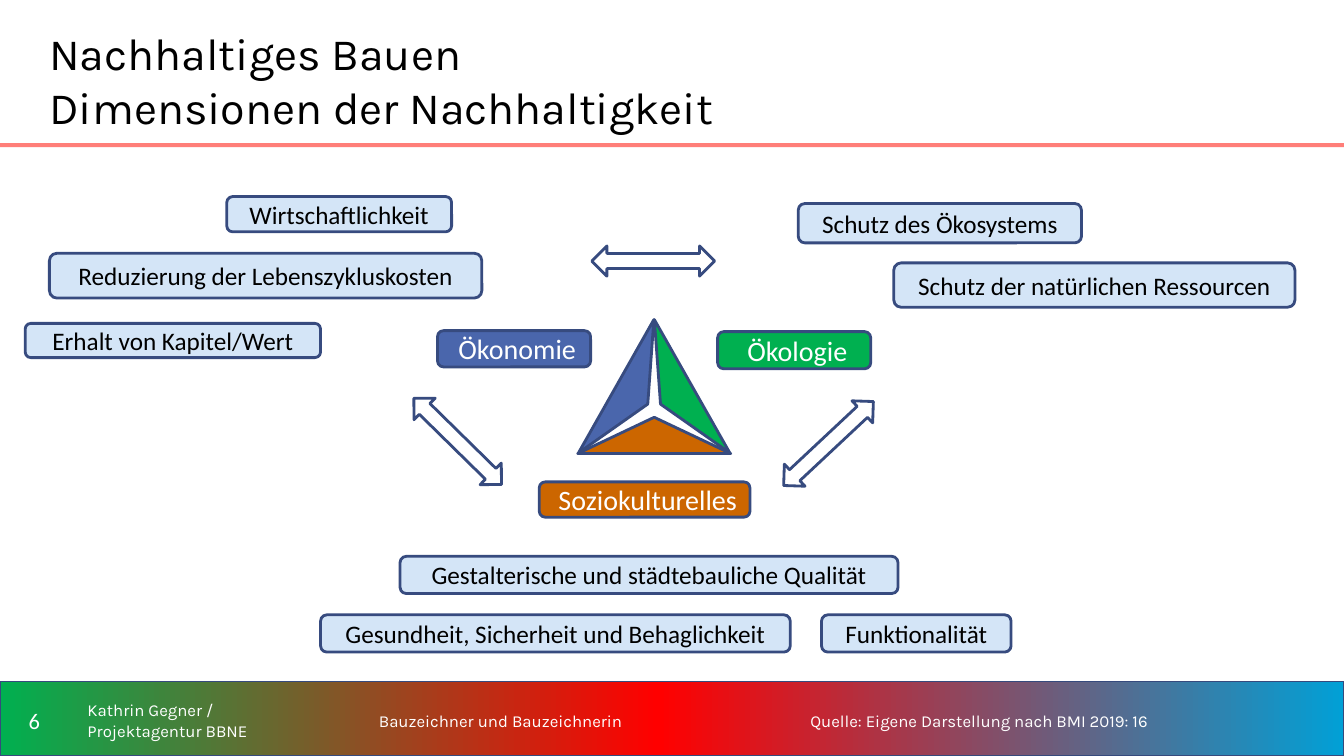
from copy import deepcopy
from dataclasses import dataclass

from pptx import Presentation
from pptx.dml.color import RGBColor
from pptx.enum.shapes import MSO_SHAPE
from pptx.enum.text import MSO_ANCHOR, PP_ALIGN
from pptx.oxml.ns import qn
from pptx.shapes.autoshape import Shape
from pptx.slide import Slide
from pptx.util import Pt

RECTANGLE = MSO_SHAPE.RECTANGLE
ROUNDED = MSO_SHAPE.ROUNDED_RECTANGLE
TRIANGLE = MSO_SHAPE.ISOSCELES_TRIANGLE
DOUBLE_ARROW = MSO_SHAPE.UP_DOWN_ARROW
MIDDLE = MSO_ANCHOR.MIDDLE
LEFT = PP_ALIGN.LEFT
CENTER = PP_ALIGN.CENTER

WIDTH, HEIGHT = 960, 540
FOOTER_TOP = 486.7
FOOTER_TEXT_TOP, FOOTER_TEXT_HEIGHT = 492.5, 43.9
SECTOR_WIDTH, SECTOR_HEIGHT = 109.4, 25.9
ARROW_WIDTH, ARROW_HEIGHT = 21.6, 87.8

BLACK, WHITE = "000000", "FFFFFF"
OUTLINE, PALE = "374B7F", "D4E5F7"
BLUE, GREEN, BROWN = "4A66AC", "00B050", "CC6600"
FOOTER_STOPS = [(0, GREEN), (0.49, "FF0000"), (1, "01A0D6")]


@dataclass
class Label:
    text: str
    left: float
    top: float
    width: float
    height: float
    fill: str = PALE
    color: str = BLACK
    size: float = 18


@dataclass
class Turned:
    left: float
    top: float
    rotation: float
    fill: str | None = None


@dataclass
class Caption:
    text: str
    left: float
    top: float
    width: float
    height: float
    size: float
    color: str = WHITE
    font: str = "Karla"
    align: PP_ALIGN = LEFT
    spacing: float = 1.0


LABELS = [
    Label(" Ökologie", 512.6, 236.9, 109.4, 26.6, GREEN, WHITE, 20),
    Label(" Soziokulturelles", 385.2, 344.2, 150.5, 25.2, BROWN, WHITE, 20),
    Label(" Ökonomie", 312.5, 236.2, 109.4, 25.9, BLUE, WHITE, 20),
    Label("Wirtschaftlichkeit", 162, 140.4, 160.6, 25.2),
    Label("Reduzierung der Lebenszykluskosten", 35.3, 180.9, 308.9, 32),
    Label("Erhalt von Kapitel/Wert", 18, 231, 211, 24.5),
    Label("Schutz des Ökosystems", 570.2, 145.4, 202.3, 28.1),
    Label("Schutz der natürlichen Ressourcen", 638.4, 187.8, 286.6, 31.7),
    Label("Gestalterische und städtebauliche Qualität", 285.8, 397.4, 355.7, 26.6),
    Label("Gesundheit, Sicherheit und Behaglichkeit", 229, 439.2, 335.5, 26.6),
    Label("Funktionalität", 586.8, 439.2, 135.4, 26.6),
]

SECTORS = [
    Turned(412.6, 298.1, 0, BROWN),
    Turned(428.4, 269.3, 240.5, GREEN),
    Turned(396.7, 269.3, 119.5, BLUE),
]

ARROWS = [
    Turned(455.8, 142.6, 90),
    Turned(316.1, 271.4, 134.5),
    Turned(581, 272.9, 226.9),
]

CAPTIONS = [
    Caption("Nachhaltiges Bauen\vDimensionen der Nachhaltigkeit",
            28.1, 14.4, 907.2, 85, 32, BLACK),
    Caption("Bauzeichner und Bauzeichnerin", 263.5, FOOTER_TEXT_TOP,
            301.7, FOOTER_TEXT_HEIGHT, 12, spacing=1.1),
    Caption("Quelle: Eigene Darstellung nach BMI 2019: 16", 571.7, FOOTER_TEXT_TOP,
            260.6, FOOTER_TEXT_HEIGHT, 12, spacing=1.1),
    Caption("Kathrin Gegner /\vProjektagentur BBNE", 55.4, FOOTER_TEXT_TOP,
            200.2, FOOTER_TEXT_HEIGHT, 12),
    Caption("6", 0, FOOTER_TEXT_TOP, 49, FOOTER_TEXT_HEIGHT, 16,
            font="Calibri", align=CENTER),
]


def rgb(value: str) -> RGBColor:
    return RGBColor.from_string(value)


def add_figure(slide: Slide, kind: MSO_SHAPE, left: float, top: float,
               width: float, height: float, fill: str | None = None,
               line: str | None = OUTLINE, line_width: float = 2) -> Shape:
    figure = slide.shapes.add_shape(kind, Pt(left), Pt(top), Pt(width), Pt(height))
    figure.shadow.inherit = False
    if fill:
        figure.fill.solid()
        figure.fill.fore_color.rgb = rgb(fill)
    else:
        figure.fill.background()
    if line:
        figure.line.color.rgb = rgb(line)
        figure.line.width = Pt(line_width)
    else:
        figure.line.fill.background()
    return figure


def write(holder: Shape, text: str, size: float, color: str, font: str,
          align: PP_ALIGN, spacing: float = 1.0) -> None:
    frame = holder.text_frame
    frame.word_wrap = True
    frame.vertical_anchor = MIDDLE
    frame.text = text
    for paragraph in frame.paragraphs:
        paragraph.alignment = align
        paragraph.line_spacing = spacing
        for run in paragraph.runs:
            run.font.size = Pt(size)
            run.font.name = font
            run.font.color.rgb = rgb(color)


def add_footer(slide: Slide) -> None:
    footer = add_figure(slide, RECTANGLE, 0, FOOTER_TOP, WIDTH,
                        HEIGHT - FOOTER_TOP, line="364A7D", line_width=1)
    footer.fill.gradient()
    footer.fill.gradient_angle = 0
    stop_list = footer._element.spPr.find(qn("a:gradFill")).find(qn("a:gsLst"))
    stop_list.append(deepcopy(stop_list[-1]))
    for stop, (position, color) in zip(footer.fill.gradient_stops, FOOTER_STOPS):
        stop.position = position
        stop.color.rgb = rgb(color)


def add_caption(slide: Slide, caption: Caption) -> None:
    box = slide.shapes.add_textbox(Pt(caption.left), Pt(caption.top),
                                   Pt(caption.width), Pt(caption.height))
    write(box, caption.text, caption.size, caption.color, caption.font,
          caption.align, caption.spacing)


def add_label(slide: Slide, label: Label) -> None:
    box = add_figure(slide, ROUNDED, label.left, label.top, label.width,
                     label.height, label.fill)
    write(box, label.text, label.size, label.color, "Calibri", CENTER)


def add_turned(slide: Slide, kind: MSO_SHAPE, item: Turned,
               width: float, height: float) -> None:
    figure = add_figure(slide, kind, item.left, item.top, width, height, item.fill)
    figure.rotation = item.rotation


def main() -> None:
    presentation = Presentation()
    presentation.slide_width = Pt(WIDTH)
    presentation.slide_height = Pt(HEIGHT)
    slide = presentation.slides.add_slide(presentation.slide_layouts[6])
    add_footer(slide)
    add_figure(slide, RECTANGLE, 0, 102.2, WIDTH, 2.9, "FF7E79", None)
    for caption in CAPTIONS:
        add_caption(slide, caption)
    for sector in SECTORS:
        add_turned(slide, TRIANGLE, sector, SECTOR_WIDTH, SECTOR_HEIGHT)
    for label in LABELS:
        add_label(slide, label)
    for arrow in ARROWS:
        add_turned(slide, DOUBLE_ARROW, arrow, ARROW_WIDTH, ARROW_HEIGHT)
    presentation.save("out.pptx")


if __name__ == "__main__":
    main()
